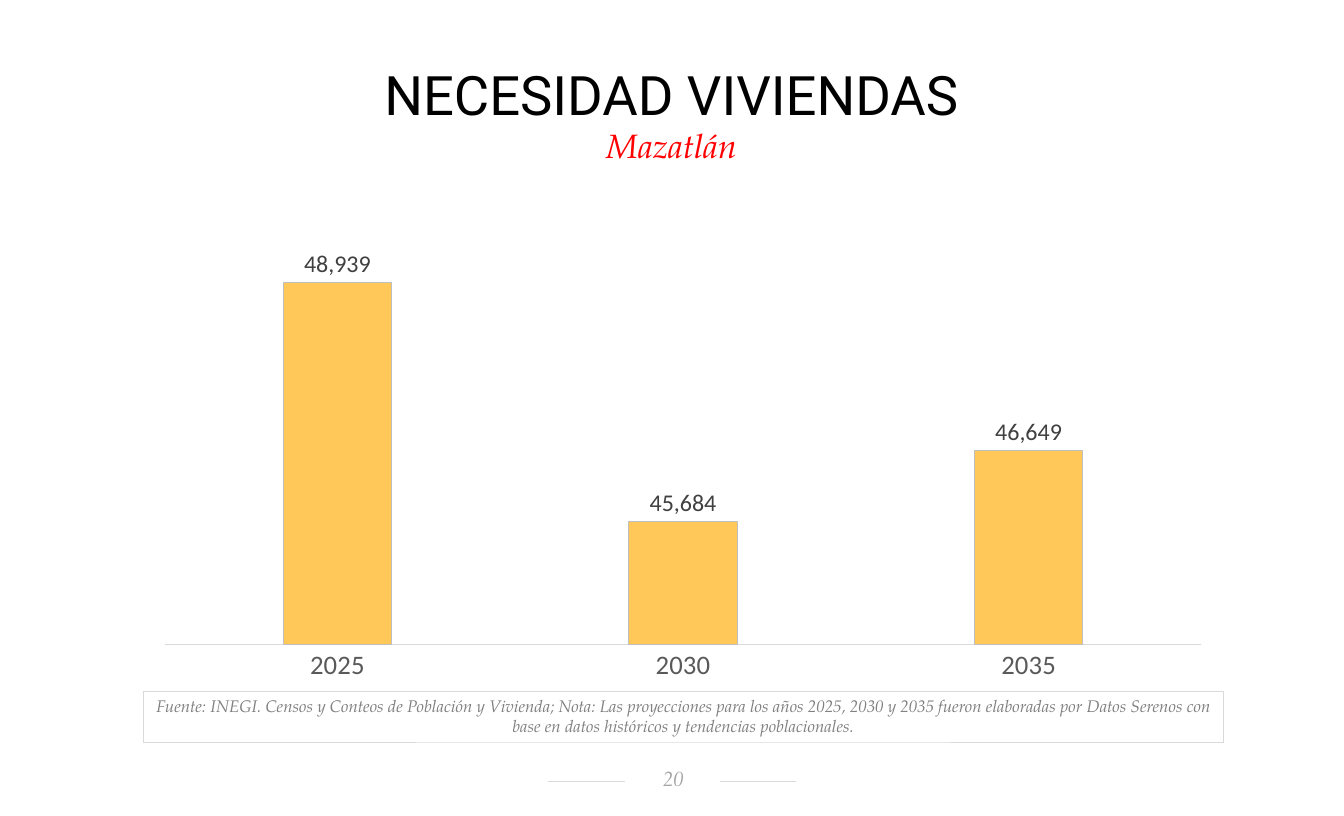
from lxml import etree
from pptx import Presentation
from pptx import util as u
from pptx.chart.data import CategoryChartData
from pptx.dml.color import RGBColor
from pptx.enum import chart as ch, shapes, text
from pptx.oxml.ns import qn

SERIF = "TeX Gyre Pagella"


def rgb(value):
    return RGBColor.from_string(value)


def write(sp, words, size, font, color, italic=True):
    """Put one centred paragraph into a shape and return the paragraph."""
    tf = sp.text_frame
    tf.word_wrap = True
    tf.text = words
    p = tf.paragraphs[0]
    p.alignment = text.PP_ALIGN.CENTER
    f = p.runs[0].font
    f.size, f.name, f.italic = u.Pt(size), font, italic
    f.color.rgb = rgb(color)
    return p


prs = Presentation()
prs.slide_width, prs.slide_height = u.Inches(14), u.Inches(8.5)
s = prs.slides.add_slide(prs.slide_layouts[6])

# Page number over a rule
rule = s.shapes.add_connector(
    shapes.MSO_CONNECTOR.STRAIGHT,
    u.Inches(5.71), u.Inches(8.14), u.Inches(8.29), u.Inches(8.14))
rule.line.color.rgb = rgb("D9D9D9")
rule.line.width = u.Pt(0.75)
etree.SubElement(rule.line._get_or_add_ln().getparent(), qn("a:effectLst"))

number = s.shapes.add_shape(
    shapes.MSO_SHAPE.RECTANGLE,
    u.Inches(6.51), u.Inches(7.98), u.Inches(0.99), u.Inches(0.29))
number.shadow.inherit = False
number.fill.solid()
number.fill.fore_color.rgb = rgb("FFFFFF")
number.line.fill.background()
write(number, "20", 15.4, SERIF, "A6A6A6")
tf = number.text_frame
tf.vertical_anchor = text.MSO_ANCHOR.MIDDLE
tf.margin_left, tf.margin_right = u.Inches(0.11), u.Inches(0.09)
tf.margin_top, tf.margin_bottom = u.Inches(0.02), u.Inches(0.05)

# Source note
note = s.shapes.add_shape(
    shapes.MSO_SHAPE.RECTANGLE,
    u.Inches(1.49), u.Inches(7.2), u.Inches(11.25), u.Inches(0.53))
note.shadow.inherit = False
note.fill.background()
note.line.color.rgb = rgb("D9D9D9")
note.line.width = u.Pt(0.75)
write(note, "Fuente: INEGI. Censos y Conteos de Población y Vivienda; Nota: Las "
      "proyecciones para los años 2025, 2030 y 2035 fueron elaboradas por Datos "
      "Serenos con base en datos históricos y tendencias poblacionales.",
      12.6, SERIF, "808080")
note.text_frame.vertical_anchor = text.MSO_ANCHOR.TOP
note.text_frame.auto_size = text.MSO_AUTO_SIZE.SHAPE_TO_FIT_TEXT

# Title and subtitle
title = s.shapes.add_textbox(
    u.Inches(0.49), u.Inches(0.76), u.Inches(13.01), u.Inches(0.6))
p = write(title, "NECESIDAD VIVIENDAS", 40.8, "Roboto", "000000", italic=False)
p.line_spacing = 0.7
tf = title.text_frame
tf.margin_left = tf.margin_right = u.Inches(0.12)
tf.margin_top = tf.margin_bottom = u.Inches(0.06)
tf.auto_size = text.MSO_AUTO_SIZE.SHAPE_TO_FIT_TEXT

city = s.shapes.add_textbox(
    u.Inches(-0.35), u.Inches(1.25), u.Inches(14.7), u.Inches(0.53))
p = write(city, "Mazatlán", 25.2, SERIF, "FF0000")
p.space_after = u.Pt(4.2)
city.text_frame.auto_size = text.MSO_AUTO_SIZE.SHAPE_TO_FIT_TEXT

# Housing need by year
data = CategoryChartData(number_format="0")
data.categories = ["2025", "2030", "2035"]
data.add_series("Series 1", [48939, 45684, 46649])
chart = s.shapes.add_chart(
    ch.XL_CHART_TYPE.COLUMN_CLUSTERED,
    u.Inches(1.49), u.Inches(2.03), u.Inches(11.25), u.Inches(5.17), data).chart
chart.has_legend = False
chart.has_title = False
chart.font.name, chart.font.size = "Calibri", u.Pt(10)
chart.font.color.rgb = rgb("000000")

years = chart.category_axis
years.major_tick_mark = ch.XL_TICK_MARK.NONE
years.format.line.color.rgb = rgb("D9D9D9")
years.format.line.width = u.Pt(0.75)

homes = chart.value_axis
homes.visible = False
homes.has_major_gridlines = False
homes.minimum_scale, homes.maximum_scale = 44000, 50000

plot = chart.plots[0]
plot.gap_width, plot.overlap = 219, -27
plot.vary_by_categories = False
bars = plot.series[0]
bars.format.fill.solid()
bars.format.fill.fore_color.rgb = rgb("FFC859")
bars.format.line.color.rgb = rgb("BFBFBF")
bars.format.line.width = u.Pt(0.75)

labels = bars.data_labels
labels.show_value = True
labels.number_format, labels.number_format_is_linked = "#,##0", False
labels.position = ch.XL_LABEL_POSITION.OUTSIDE_END

for font, size, color in [(years.tick_labels.font, 20, "595959"),
                          (labels.font, 18, "404040")]:
    font.name, font.size = "Calibri", u.Pt(size)
    font.color.rgb = rgb(color)

prs.save("out.pptx")
